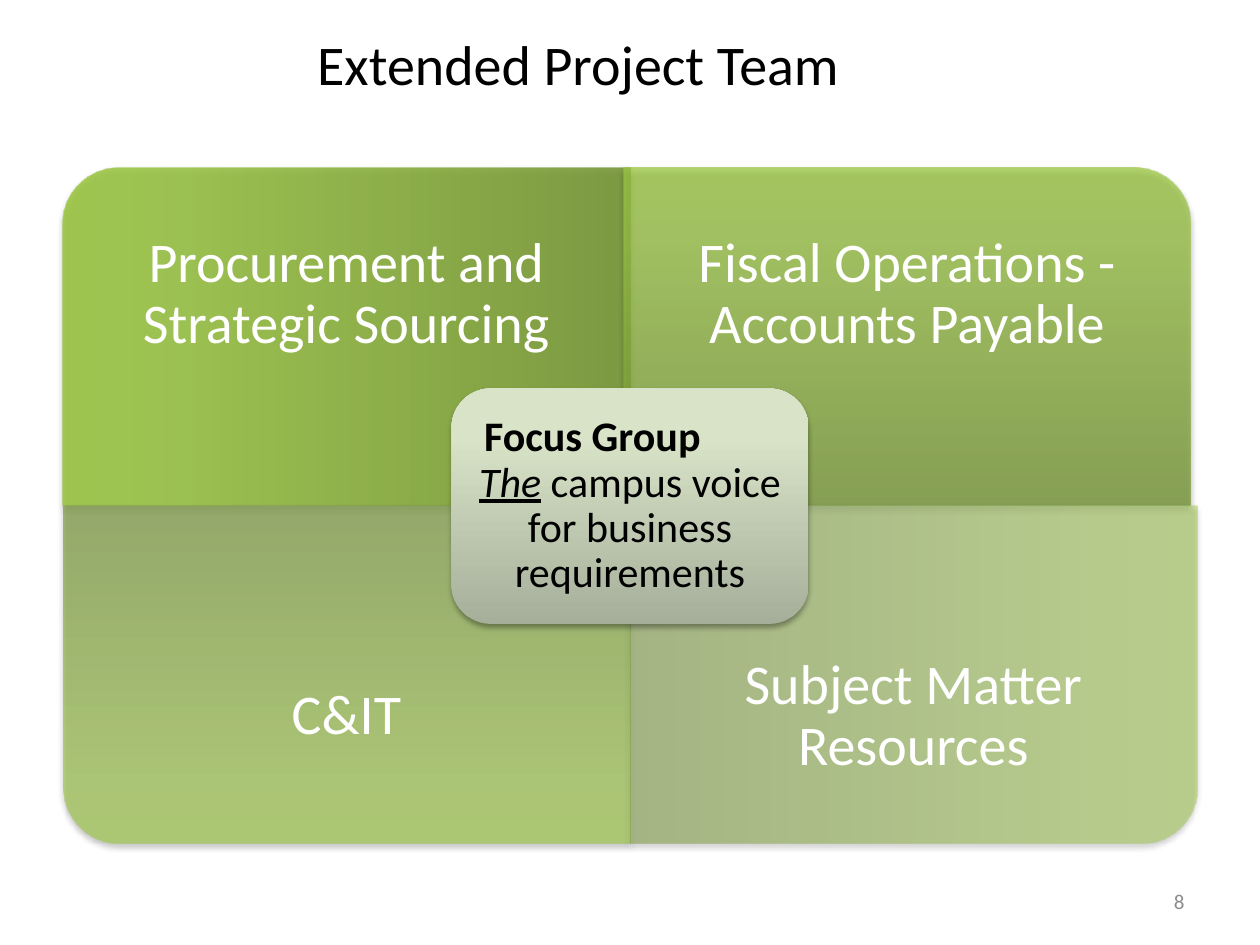
from dataclasses import dataclass

import pptx
import pptx.dml.color
import pptx.enum.shapes
import pptx.enum.text
import pptx.oxml
import pptx.oxml.ns
import pptx.util
from lxml import etree

Pt = pptx.util.Pt
Align = pptx.enum.text.PP_ALIGN
Shape = pptx.enum.shapes.MSO_SHAPE

FONT = "Calibri"
COLORS = {
    "text": "000000",
    "tile_text": "FFFFFF",
    "page_number": "8C8C8C",
    "shadow": "000000",
}
TILE_STOPS = ((0, "779737"), (80, "9BC348"), (100, "9DC746"))
FOCUS_STOPS = ((0, "A6AF9A"), (80, "D8E3C8"), (100, "D9E4C8"))

# Tile grid, in points
LEFT, MIDDLE, TOP = 36, 360, 96
TILE_W, TILE_H = 324, 193
LABEL_H = TILE_H * 0.75


@dataclass
class Tile:
    label: str
    left: float
    row: int
    rotation: int
    opacity: int


TILES = [
    Tile("Procurement and Strategic Sourcing", LEFT, 0, 270, 90),
    Tile("Fiscal Operations - Accounts Payable", MIDDLE - 3.6, 0, 0, 77),
    Tile("C&IT", LEFT, 1, 180, 63),
    Tile("Subject Matter Resources", MIDDLE, 1, 90, 50),
]


def style_font(font, size: float, color: str) -> None:
    font.name = FONT
    font.size = Pt(size)
    font.color.rgb = pptx.dml.color.RGBColor.from_string(COLORS[color])


def set_frame(frame, margin: float) -> None:
    frame.word_wrap = True
    frame.vertical_anchor = pptx.enum.text.MSO_ANCHOR.MIDDLE
    frame.margin_left = frame.margin_right = Pt(margin)
    frame.margin_top = frame.margin_bottom = Pt(margin)


def add_text(slide, text: str, box: tuple, margin: float, size: float,
             color: str, align, line_spacing: float = 1) -> None:
    frame = slide.shapes.add_textbox(*map(Pt, box)).text_frame
    set_frame(frame, margin)
    paragraph = frame.paragraphs[0]
    paragraph.text = text
    paragraph.alignment = align
    paragraph.line_spacing = line_spacing
    style_font(paragraph.font, size, color)


def style_panel(panel, stops: tuple, opacity: int = 100) -> None:
    """Vertical three-stop gradient, no outline, soft shadow below."""
    namespace = pptx.oxml.ns.nsdecls("a")
    stop_xml = "".join(
        f'<a:gs pos="{position * 1000}"><a:srgbClr val="{color}">'
        f'<a:alpha val="{opacity * 1000}"/></a:srgbClr></a:gs>'
        for position, color in stops)
    gradient = pptx.oxml.parse_xml(
        f'<a:gradFill {namespace} rotWithShape="1"><a:gsLst>{stop_xml}</a:gsLst>'
        '<a:lin ang="16200000" scaled="0"/></a:gradFill>')
    panel.line.fill.background()
    panel.shadow.inherit = False
    properties = panel.fill._xPr
    properties.find(pptx.oxml.ns.qn("a:prstGeom")).addnext(gradient)
    effects = properties.find(pptx.oxml.ns.qn("a:effectLst"))
    effects.append(etree.fromstring(
        f'<a:outerShdw {namespace} blurRad="{Pt(3.1)}" dist="{Pt(1.8)}" '
        f'dir="5400000" rotWithShape="0"><a:srgbClr val="{COLORS["shadow"]}">'
        '<a:alpha val="35000"/></a:srgbClr></a:outerShdw>'))


def add_tile(slide, tile: Tile) -> None:
    top = TOP + tile.row * TILE_H
    # A quarter turn swaps the sides around the same centre
    quarter_turn = tile.rotation % 180 != 0
    width, height = (TILE_H, TILE_W) if quarter_turn else (TILE_W, TILE_H)
    panel = slide.shapes.add_shape(
        Shape.ROUND_1_RECTANGLE,
        Pt(tile.left + (TILE_W - width) / 2), Pt(top + (TILE_H - height) / 2),
        Pt(width), Pt(height))
    panel.rotation = tile.rotation
    style_panel(panel, TILE_STOPS, tile.opacity)

    # Labels keep to the outer three quarters of the tile
    label_top = top + tile.row * (TILE_H - LABEL_H)
    add_text(slide, tile.label, (tile.left, label_top, TILE_W, LABEL_H),
             18, 32, "tile_text", Align.CENTER, 0.9)


def add_focus_group(slide) -> None:
    panel = slide.shapes.add_shape(
        Shape.ROUNDED_RECTANGLE, Pt(258), Pt(222), Pt(204), Pt(134.5))
    style_panel(panel, FOCUS_STOPS)
    frame = panel.text_frame
    set_frame(frame, 7.2)

    heading = frame.paragraphs[0]
    heading.text = "Focus Group"
    heading.alignment = Align.LEFT
    heading._p.get_or_add_pPr().set("marL", str(Pt(5)))
    heading.font.bold = True

    voice = frame.add_paragraph()
    voice.alignment = Align.CENTER
    emphasis = voice.add_run()
    emphasis.text = "The"
    emphasis.font.italic = emphasis.font.underline = True
    voice.add_run().text = " campus voice for business requirements"

    for paragraph in (heading, voice):
        paragraph.line_spacing = 0.9
        style_font(paragraph.font, 24, "text")


def main() -> None:
    deck = pptx.Presentation()
    deck.slide_width, deck.slide_height = Pt(720), Pt(540)
    slide = deck.slides.add_slide(deck.slide_layouts[5])

    # Title
    title = slide.shapes.title
    title.left, title.top, title.width, title.height = map(Pt, (174, 0, 522, 72))
    title.text_frame.text = "Extended Project Team"
    heading = title.text_frame.paragraphs[0]
    heading.alignment = Align.LEFT
    style_font(heading.font, 32, "text")

    # Four teams around the focus group
    for tile in TILES:
        add_tile(slide, tile)
    add_focus_group(slide)

    # Page number
    add_text(slide, "8", (516, 500.5, 168, 28.75), 7.2, 12,
             "page_number", Align.RIGHT)

    deck.save("out.pptx")


if __name__ == "__main__":
    main()
